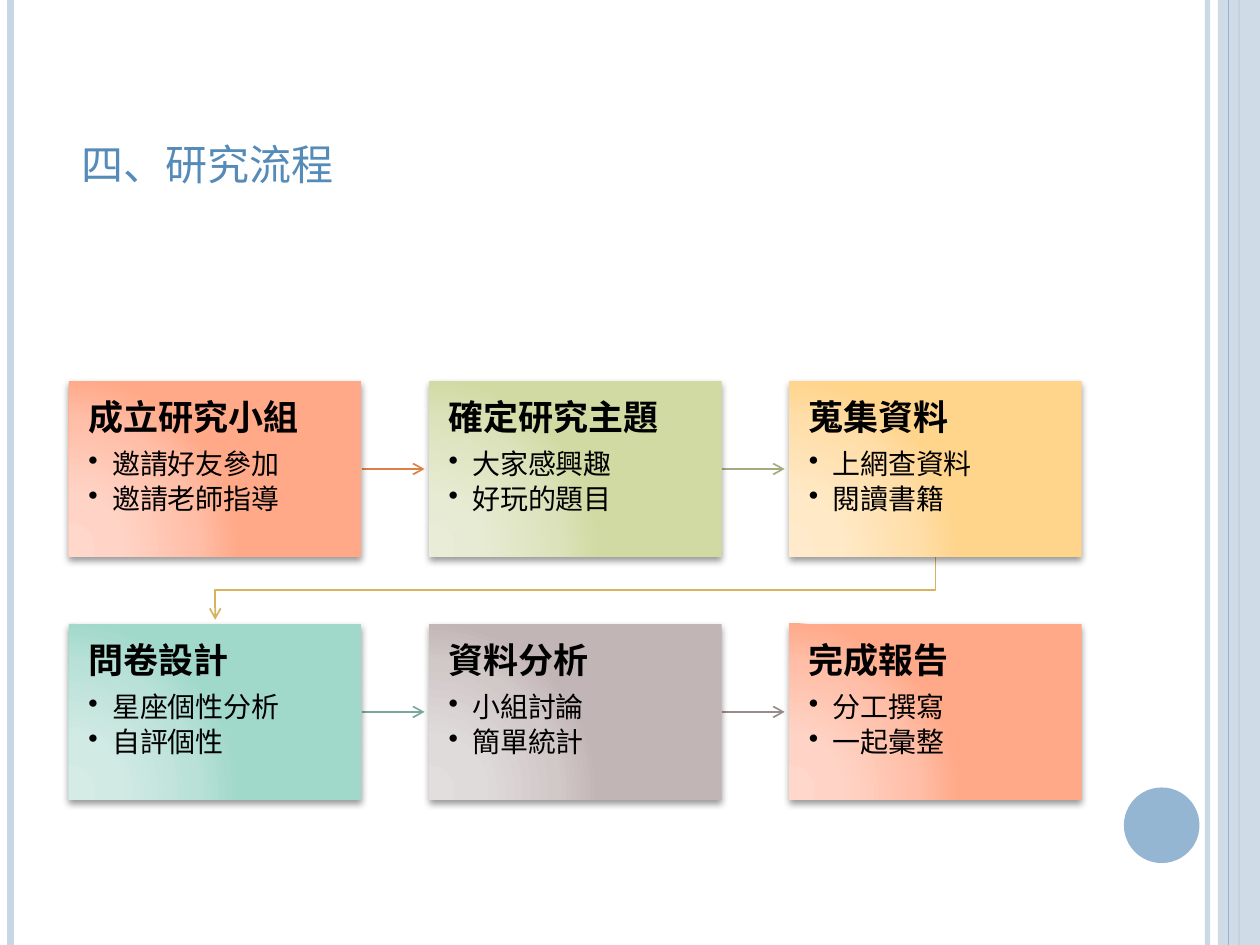
from lxml import etree
from pptx import Presentation
from pptx.dml.color import RGBColor
from pptx.enum import shapes, text
from pptx.oxml import parse_xml
from pptx.oxml.ns import qn
from pptx.util import Pt

NS = 'xmlns:a="http://schemas.openxmlformats.org/drawingml/2006/main"'
FONT = "TeX Gyre Schola"
HUES = {
    "pale": "C8D7E5", "blue": "94B6D2", "title": "558BB8", "ink": "000000",
    "coral": "DD8047", "olive": "A5AB81", "gold": "D8B25C",
    "teal": "7BA79D", "mauve": "968C8C",
}
FILLS = {
    "coral": ("FFD8CB", "FFD4C6", "FFBEA7", "FFA988"),
    "olive": ("E9EDD7", "E7EBD3", "DCE2BB", "D1DAA3"),
    "gold": ("FFEACB", "FFE9C6", "FFDEA9", "FFD48B"),
    "teal": ("D5ECE6", "D1EAE4", "B9E1D7", "A0D8CA"),
    "mauve": ("E3DEDE", "E0DBDB", "D1C8C8", "C2B5B5"),
}
HEAD = {"size": Pt(20), "bold": True, "name": FONT}
ITEM = {"size": Pt(16), "bold": False, "name": FONT}
STEPS = [
    ("成立研究小組", ("邀請好友參加", "邀請老師指導"), "coral"),
    ("確定研究主題", ("大家感興趣", "好玩的題目"), "olive"),
    ("蒐集資料", ("上網查資料", "閱讀書籍"), "gold"),
    ("問卷設計", ("星座個性分析", "自評個性"), "teal"),
    ("資料分析", ("小組討論", "簡單統計"), "mauve"),
    ("完成報告", ("分工撰寫", "一起彙整"), "coral"),
]
LEFT, TOP, WIDE, HIGH = 39.4, 217.8, 167.2, 100.4
COL, ROW, GAP, COLS = 205.8, 138.8, 36, 3


def rgb(name):
    return RGBColor.from_string(HUES[name])


def put(target, values):
    for key, value in values.items():
        setattr(target, key, value)


class Deck:
    def __init__(self):
        self.file = Presentation()
        put(self.file, {"slide_width": Pt(720), "slide_height": Pt(540)})
        self.slide = self.file.slides.add_slide(self.file.slide_layouts[6])
        self.items = self.slide.shapes

    def fade(self, color, alpha):
        node = next(color.iter(qn("a:srgbClr")))
        etree.SubElement(node, qn("a:alpha")).set("val", str(alpha * 1000))

    def line(self, start, end, hue, width, alpha=100, arrow=False):
        link = self.items.add_connector(
            shapes.MSO_CONNECTOR.STRAIGHT, *map(Pt, start + end))
        self.pen(link, hue, width, arrow)
        props = link._element.spPr
        etree.SubElement(props, qn("a:effectLst"))
        if alpha < 100:
            self.fade(props, alpha)

    def pen(self, item, hue, width, arrow):
        item.line.color.rgb = rgb(hue)
        item.line.width = Pt(width)
        if arrow:
            edge = item._element.spPr.find(qn("a:ln"))
            etree.SubElement(edge, qn("a:tailEnd")).set("type", "arrow")

    def bend(self, spots, hue):
        spots = [tuple(map(Pt, spot)) for spot in spots]
        draft = self.items.build_freeform(*spots[0])
        draft.add_line_segments(spots[1:], close=False)
        item = draft.convert_to_shape()
        item.shadow.inherit = False
        item.fill.background()
        self.pen(item, hue, 1, True)

    def shape(self, kind, box, hue=None, alpha=100):
        item = self.items.add_shape(kind, *map(Pt, box))
        item.shadow.inherit = False
        item.line.fill.background()
        if hue:
            item.fill.solid()
            item.fill.fore_color.rgb = rgb(hue)
        if alpha < 100:
            self.fade(item._element.spPr, alpha)
        return item

    def label(self, para, words, style, hue):
        run = para.add_run()
        run.text = words
        put(run.font, style)
        run.font.color.rgb = rgb(hue)
        return run

    def title(self, words, box):
        frame = self.items.add_textbox(*map(Pt, box)).text_frame
        put(frame, {"word_wrap": True,
                    "vertical_anchor": text.MSO_ANCHOR.BOTTOM})
        style = {"size": Pt(30), "name": FONT}
        run = self.label(frame.paragraphs[0], words, style, "title")
        run._r.get_or_add_rPr().set("cap", "small")

    def card(self, head, items, hue, box):
        card = self.shape(shapes.MSO_SHAPE.RECTANGLE, box)
        props = card._element.spPr
        stops = "".join(
            f'<a:gs pos="{spot * 1000}"><a:srgbClr val="{color}"/></a:gs>'
            for spot, color in zip((0, 30, 75, 100), FILLS[hue]))
        props.find(qn("a:prstGeom")).addnext(parse_xml(
            f'<a:gradFill {NS} rotWithShape="1"><a:gsLst>{stops}</a:gsLst>'
            '<a:path path="circle"><a:fillToRect l="5000" t="100000" '
            'r="120000" b="10000"/></a:path></a:gradFill>'))
        glow = props.find(qn("a:effectLst"))
        glow.append(parse_xml(
            f'<a:outerShdw {NS} blurRad="{Pt(4)}" dist="{Pt(2)}" dir="5400000" '
            f'rotWithShape="0"><a:srgbClr val="{HUES["ink"]}">'
            '<a:alpha val="40000"/></a:srgbClr></a:outerShdw>'))
        frame = card.text_frame
        sides = ("left", "top", "right", "bottom")
        put(frame, {f"margin_{side}": Pt(11.2) for side in sides})
        put(frame, {"word_wrap": True, "vertical_anchor": text.MSO_ANCHOR.TOP})
        for num, words in enumerate((head, *items)):
            para = frame.add_paragraph() if num else frame.paragraphs[0]
            put(para, {"alignment": text.PP_ALIGN.LEFT, "line_spacing": 0.9,
                       "space_after": Pt(2.4 if num else 7)})
            self.label(para, words, ITEM if num else HEAD, "ink")
            if num:
                self.dot(para)

    def dot(self, para):
        para.level = 1
        props = para._p.get_or_add_pPr()
        for key, value in {"marL": Pt(13.5), "indent": -Pt(13.5)}.items():
            props.set(key, str(value))
        etree.SubElement(props, qn("a:buChar")).set("char", "•")


def main():
    deck = Deck()
    kinds = shapes.MSO_SHAPE
    for x, hue, width, alpha in ((690, "pale", 3, 93), (6, "pale", 4.5, 100),
                                 (708, "blue", 1.5, 100)):
        deck.line((x, 0), (x, 540), hue, width, alpha)
    deck.shape(kinds.RECTANGLE, (696, 0, 24, 540), "pale", 87)
    deck.line((702, 0), (702, 540), "blue", 0.75)
    deck.shape(kinds.OVAL, (642.24, 450, 43.2, 43.2), "blue")
    deck.title("四、研究流程", (39.6, 22.5, 588, 90))
    for num, (head, items, hue) in enumerate(STEPS):
        row, col = divmod(num, COLS)
        x, y = LEFT + col * COL, TOP + row * ROW
        mid = y + HIGH / 2
        if col < COLS - 1:
            deck.line((x + WIDE, mid), (x + WIDE + GAP, mid), hue, 1, arrow=True)
        elif num < len(STEPS) - 1:
            base, turn = y + HIGH, y + (HIGH + ROW) / 2
            far, near = x + WIDE / 2, LEFT + WIDE / 2
            deck.bend([(far, base), (far, turn), (near, turn),
                       (near, base + GAP)], hue)
        deck.card(head, items, hue, (x, y, WIDE, HIGH))
    deck.file.save("out.pptx")


if __name__ == "__main__":
    main()
